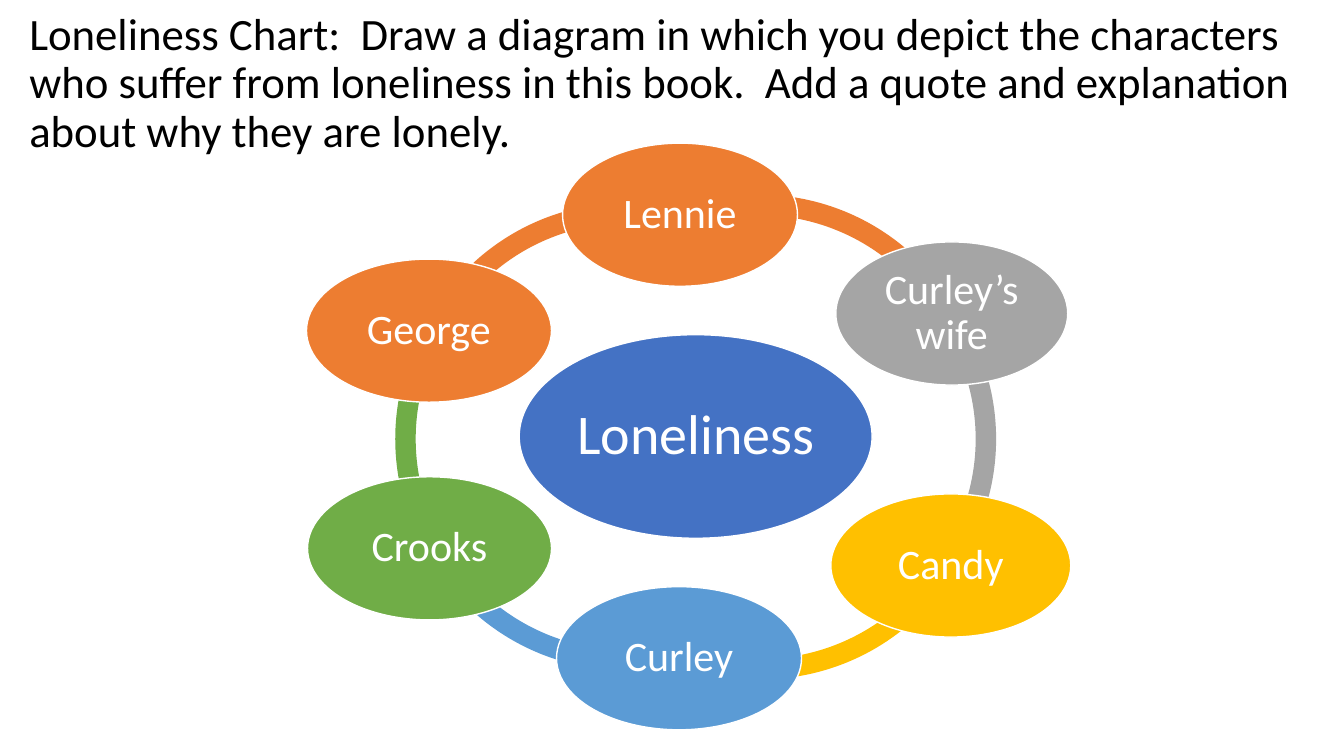
from pptx import Presentation
from pptx.dml.color import RGBColor
from pptx.enum.shapes import MSO_SHAPE
from pptx.enum.text import MSO_ANCHOR, MSO_AUTO_SIZE, PP_ALIGN
from pptx.util import Pt

OVAL, BLOCK_ARC = MSO_SHAPE.OVAL, MSO_SHAPE.BLOCK_ARC
MIDDLE, NO_FIT = MSO_ANCHOR.MIDDLE, MSO_AUTO_SIZE.NONE
LEFT, CENTER = PP_ALIGN.LEFT, PP_ALIGN.CENTER

EMU_PER_PX = 9144
FONT = "Calibri"
COLORS = {
    "black": "000000", "white": "FFFFFF", "theme": "4472C4",
    "orange": "ED7D31", "gray": "A5A5A5", "gold": "FFC000",
    "blue": "5B9BD5", "green": "70AD47",
}

SLIDE_SIZE = (1333, 750)
PROMPT = ("Loneliness Chart:  Draw a diagram in which you depict the characters "
          "who suffer from loneliness in this book.  Add a quote and explanation "
          "about why they are lonely.")
PROMPT_BOX = (19, 25, 1278, 117)

ARC_SIZE = 451
ARC_THICKNESS = 0.045
ARCS = [
    (397, 201, 124.06, 170.18, "orange"),
    (392, 210, 90.22, 125.58, "green"),
    (395, 214, 45.47, 91, "blue"),
    (529, 223, 18.5, 66.81, "gold"),
    (537, 210, 195.32, 20.82, "gray"),
    (527, 193, 149.59, 198.41, "orange"),
]

THEME = ("Loneliness", 515, 332, 350, 202, "theme", 40)
CHARACTER_HEIGHT = 142
CHARACTERS = [
    ("Lennie", 558, 142, 233, "orange"),
    ("Curley’s wife", 829, 240, 230, "gray"),
    ("Candy", 824, 490, 238, "gold"),
    ("Curley", 552, 582, 243, "blue"),
    ("Crooks", 305, 473, 242, "green"),
    ("George", 304, 257, 243, "orange"),
]


def px(*lengths):
    return [length * EMU_PER_PX for length in lengths]


def rgb(color):
    return RGBColor.from_string(COLORS[color])


def write(frame, text, size, color, align):
    frame.text = text
    frame.word_wrap = True
    frame.auto_size = NO_FIT
    frame.vertical_anchor = MIDDLE
    paragraph = frame.paragraphs[0]
    paragraph.alignment = align
    paragraph.line_spacing = 0.9
    paragraph.font.name = FONT
    paragraph.font.size = Pt(size)
    paragraph.font.color.rgb = rgb(color)


def add_filled(slide, preset, box, color):
    shape = slide.shapes.add_shape(preset, *px(*box))
    shape.shadow.inherit = False
    shape.fill.solid()
    shape.fill.fore_color.rgb = rgb(color)
    return shape


def add_arc(slide, left, top, start, end, color):
    arc = add_filled(slide, BLOCK_ARC, (left, top, ARC_SIZE, ARC_SIZE), color)
    arc.line.fill.background()
    for index, value in enumerate((start, end, ARC_THICKNESS)):
        arc.adjustments[index] = value


def add_bubble(slide, name, left, top, width, height, color, size):
    bubble = add_filled(slide, OVAL, (left, top, width, height), color)
    bubble.line.color.rgb = rgb("white")
    bubble.line.width = Pt(1)
    frame = bubble.text_frame
    frame.margin_left, frame.margin_top, frame.margin_right, frame.margin_bottom = px(4, 4, 4, 4)
    write(frame, name, size, "white", CENTER)


def main():
    deck = Presentation()
    deck.slide_width, deck.slide_height = px(*SLIDE_SIZE)
    slide = deck.slides.add_slide(deck.slide_layouts[5])

    prompt = slide.shapes.title
    prompt.left, prompt.top, prompt.width, prompt.height = px(*PROMPT_BOX)
    write(prompt.text_frame, PROMPT, 32, "black", LEFT)

    for arc in ARCS:
        add_arc(slide, *arc)
    add_bubble(slide, *THEME)
    for name, left, top, width, color in CHARACTERS:
        add_bubble(slide, name, left, top, width, CHARACTER_HEIGHT, color, 30)

    deck.save("out.pptx")


if __name__ == "__main__":
    main()
